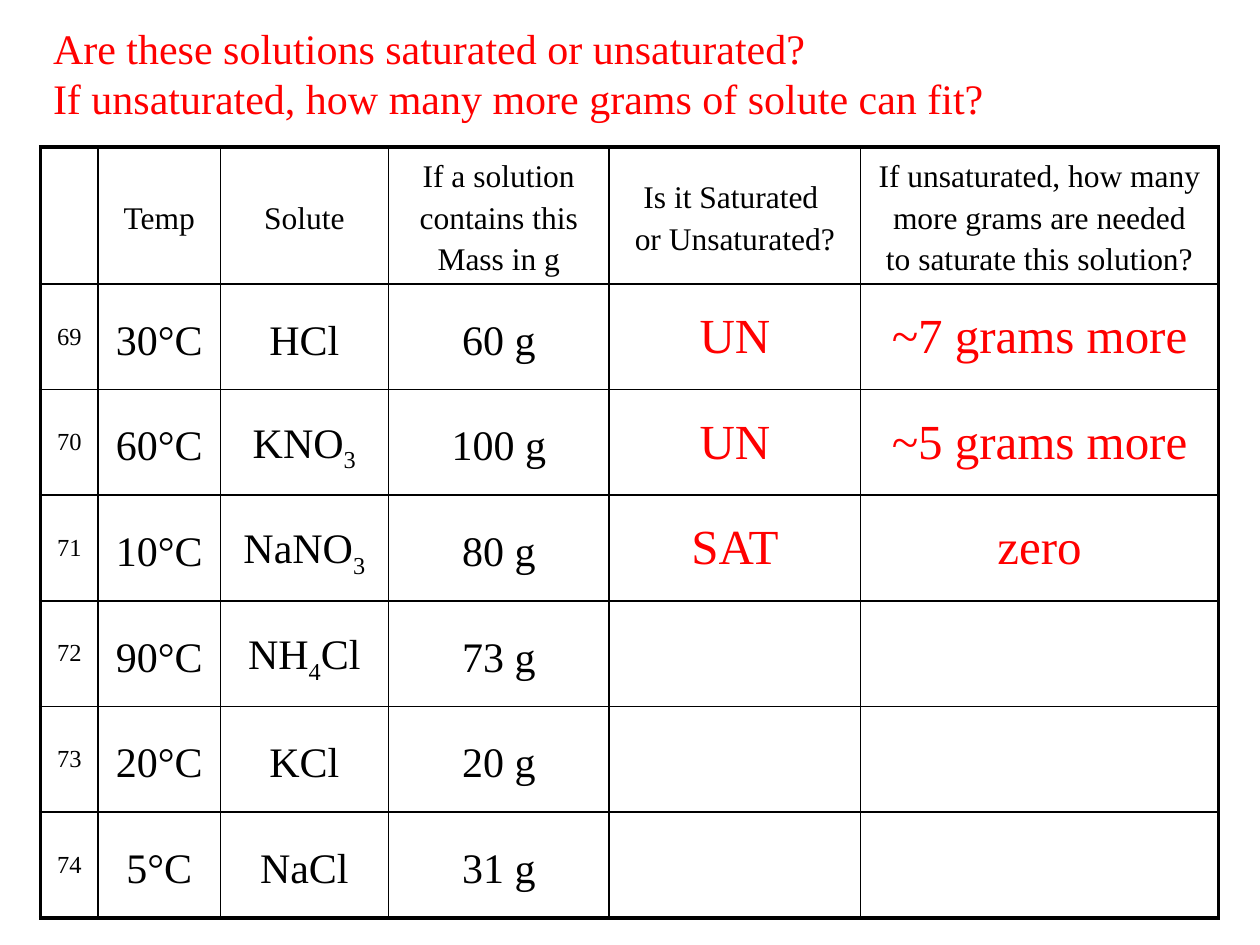
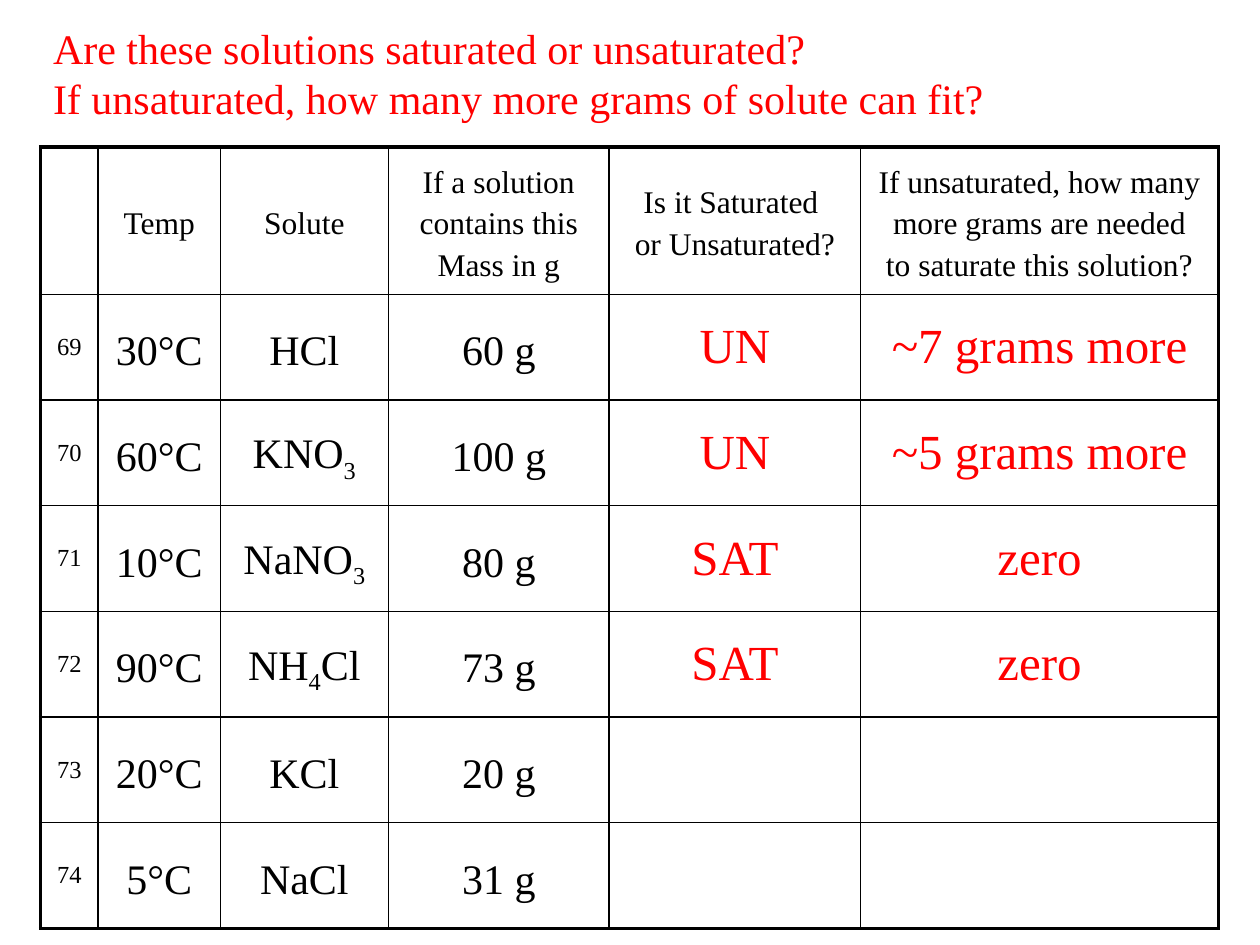
from itertools import groupby

from lxml import etree
from pptx import Presentation
from pptx.dml.color import RGBColor
from pptx.enum.text import MSO_ANCHOR, PP_ALIGN
from pptx.oxml.ns import qn
from pptx.util import Cm, Pt

MIDDLE, CENTER = MSO_ANCHOR.MIDDLE, PP_ALIGN.CENTER
FONT = "Times New Roman"
BLACK, RED = "000000", "FF0000"
THIN, THICK = Pt(1), Pt(2.25)

# Content
TITLE = ["Are these solutions saturated or unsaturated?",
         "If unsaturated, how many more grams of solute can fit?"]
HEADERS = ["", "Temp", "Solute", "If a solution contains this Mass in g",
           "Is it Saturated \nor Unsaturated?",
           "If unsaturated, how many more grams are needed\nto saturate this solution?"]
QUESTIONS = [
    ("69", "30°C", "HCl", "60 g"),
    ("70", "60°C", "KNO3", "100 g"),
    ("71", "10°C", "NaNO3", "80 g"),
    ("72", "90°C", "NH4Cl", "73 g"),
    ("73", "20°C", "KCl", "20 g"),
    ("74", "5°C", "NaCl", "31 g"),
]
ANSWERS = [("UN", "~7 grams more"), ("UN", "~5 grams more"),
           ("SAT", "zero"), ("SAT", "zero")]
ANSWERS_SHOWN = [3, 4]  # one slide each

# Layout in cm
LEFT, TABLE_TOP = 0.82, 2.96
COL_WIDTHS = [1.16, 2.46, 3.39, 4.45, 5.07, 7.21]
HEADER_HEIGHT, ROW_HEIGHT = 2.76, 2.13
NUMBER_COL, SOLUTE_COL, FIRST_ANSWER_COL = 0, 2, 4


def rgb(value):
    return RGBColor.from_string(value)


def add_run(p, text, size, color):
    r = p.add_run()
    r.text = text
    r.font.name, r.font.size = FONT, Pt(size)
    r.font.color.rgb = rgb(color)
    return r


def add_lines(p, lines, size, color):
    for i, line in enumerate(lines):
        if i:
            p.add_line_break()
        add_run(p, line, size, color)


def add_formula(p, formula, size, color):
    """Write a chemical formula with its digits as subscripts."""
    for is_digit, chars in groupby(formula, str.isdigit):
        r = add_run(p, "".join(chars), size, color)
        if is_digit:
            r._r.get_or_add_rPr().set("baseline", "-25000")


def set_borders(cell, widths):
    tcPr = cell._tc.get_or_add_tcPr()
    for side, width in zip("LRTB", widths):
        ln = etree.SubElement(tcPr, qn(f"a:ln{side}"), w=str(width))
        fill = etree.SubElement(ln, qn("a:solidFill"))
        etree.SubElement(fill, qn("a:srgbClr"), val=BLACK)


def cell_style(row, col):
    """Return size, colour and whether the lines are widely spaced."""
    if row == 0:
        return 18, BLACK, True
    if col == NUMBER_COL:
        return 14, BLACK, False
    if col >= FIRST_ANSWER_COL:
        return 28, RED, False
    return 24, BLACK, True


def fill_cell(cell, text, row, col):
    size, color, spaced = cell_style(row, col)
    cell.vertical_anchor = MIDDLE
    p = cell.text_frame.paragraphs[0]
    p.alignment = CENTER
    if spaced:
        p.line_spacing, p.space_before, p.space_after = 1.19, Pt(4.8), Pt(6)
    if row and col == SOLUTE_COL:
        add_formula(p, text, size, color)
    elif text:
        add_lines(p, text.split("\n"), size, color)


def add_solution_table(s, shown):
    answers = ANSWERS[:shown] + [("", "")] * (len(QUESTIONS) - shown)
    rows = [HEADERS] + [q + a for q, a in zip(QUESTIONS, answers)]
    height = HEADER_HEIGHT + ROW_HEIGHT * len(QUESTIONS)
    table = s.shapes.add_table(len(rows), len(HEADERS), Cm(LEFT), Cm(TABLE_TOP),
                               Cm(sum(COL_WIDTHS)), Cm(height)).table
    table.first_row = table.horz_banding = False
    for column, width in zip(table.columns, COL_WIDTHS):
        column.width = Cm(width)
    last_row, last_col = len(rows) - 1, len(HEADERS) - 1
    for i, texts in enumerate(rows):
        table.rows[i].height = Cm(ROW_HEIGHT if i else HEADER_HEIGHT)
        for j, text in enumerate(texts):
            cell = table.cell(i, j)
            edges = (j == 0, j == last_col, i == 0, i == last_row)
            set_borders(cell, [THICK if edge else THIN for edge in edges])
            cell.fill.background()
            fill_cell(cell, text, i, j)


def add_title(s):
    tf = s.shapes.add_textbox(Cm(LEFT), Cm(0.33), Cm(24.13), Cm(3.33)).text_frame
    tf.word_wrap = True
    add_lines(tf.paragraphs[0], TITLE, 24, RED)


def main():
    prs = Presentation()
    prs.slide_width, prs.slide_height = Cm(25.4), Cm(19.05)
    for shown in ANSWERS_SHOWN:
        s = prs.slides.add_slide(prs.slide_layouts[6])
        add_solution_table(s, shown)
        add_title(s)
    prs.save("out.pptx")


if __name__ == "__main__":
    main()
